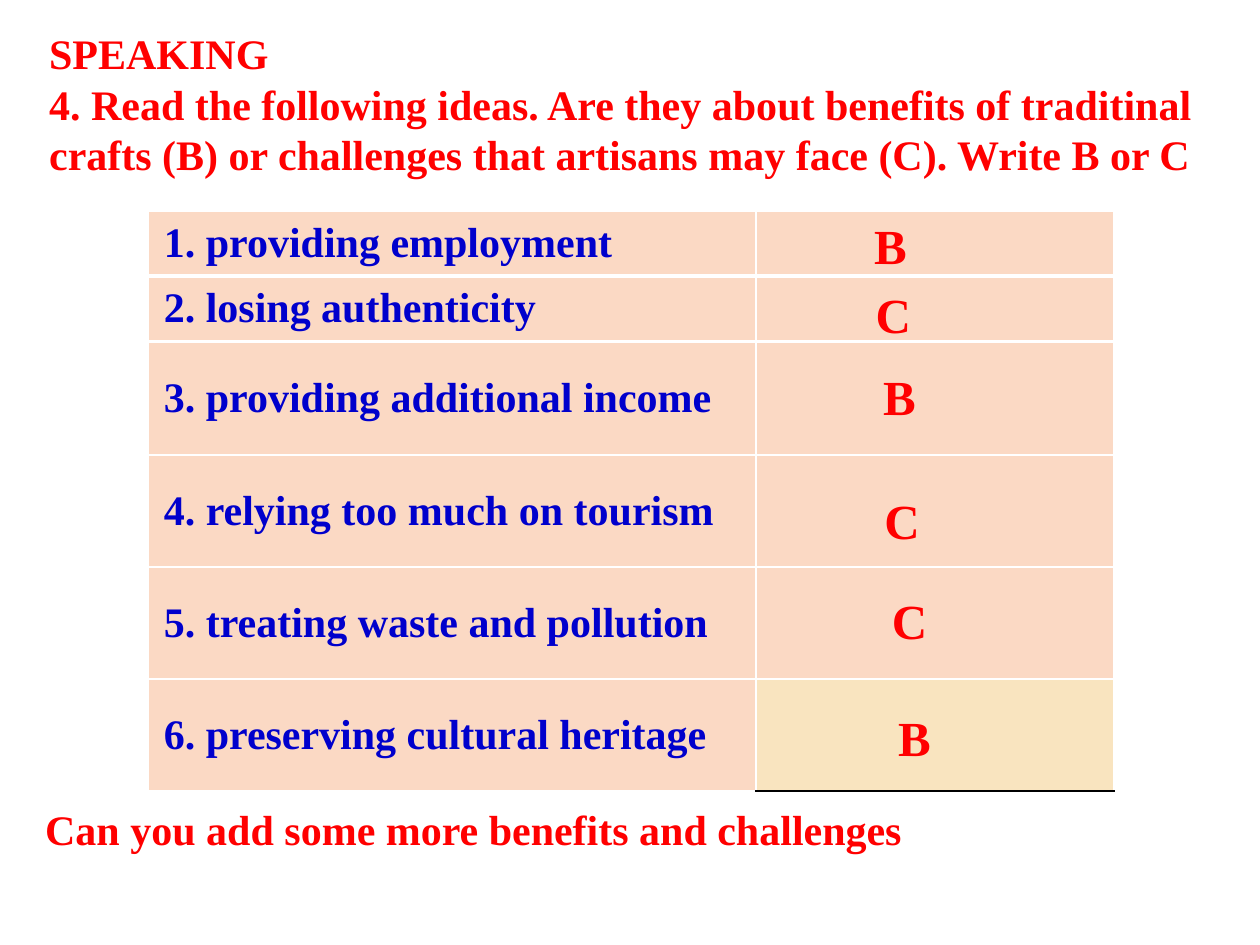
"""Build the speaking exercise slide about traditional crafts."""
from lxml import etree
from pptx import Presentation, util as u
from pptx.dml import color
from pptx.enum import text
from pptx.oxml import ns

RED, BLUE, WHITE, BLACK = "FF0000", "0000CC", "FFFFFF", "000000"
PEACH, CREAM = "FBD9C4", "F9E4BF"


def write(frame, lines, size, hex_color):
    frame.word_wrap = True
    frame.text = "\n".join(lines)
    for paragraph in frame.paragraphs:
        paragraph.alignment = text.PP_ALIGN.LEFT
        formats = {"name": "Times New Roman", "size": u.Pt(size), "bold": True}
        for name, value in formats.items():
            setattr(paragraph.font, name, value)
            setattr(paragraph.runs[0].font, name, value)
        paragraph.runs[0].font.color.rgb = color.RGBColor.from_string(hex_color)


def add_border(properties, index, side, hex_color, points):
    line = etree.Element(ns.qn(f"a:ln{side}"), w=str(u.Pt(points)))
    fill = etree.SubElement(line, ns.qn("a:solidFill"))
    etree.SubElement(fill, ns.qn("a:srgbClr"), val=hex_color)
    properties.insert(index, line)


presentation = Presentation()
presentation.slide_width, presentation.slide_height = u.Inches(10), u.Inches(7.5)
slide = presentation.slides.add_slide(presentation.slide_layouts[5])

title = slide.shapes.title
place = {"left": 0.29, "top": 0.17, "width": 9.43, "height": 1.31}
for name, value in place.items():
    setattr(title, name, u.Inches(value))
title.text_frame.auto_size = text.MSO_AUTO_SIZE.NONE
title.text_frame.vertical_anchor = text.MSO_ANCHOR.TOP
write(title.text_frame, [
    "SPEAKING",
    "4. Read the following ideas. Are they about benefits of traditinal "
    "crafts (B) or challenges that artisans may face (C). Write B or C",
], 24, RED)

ideas = [
    ("1. providing employment", 0.52),
    ("2. losing authenticity", 0.52),
    ("3. providing additional income", 0.9),
    ("4. relying too much on tourism", 0.89),
    ("5. treating waste and pollution", 0.89),
    ("6. preserving cultural heritage", 0.89),
]
last = len(ideas) - 1
table = slide.shapes.add_table(len(ideas), 2, u.Inches(1.17), u.Inches(1.67),
                               u.Inches(7.67), u.Inches(4.61)).table
table.first_row = table.horz_banding = False
for column, width in zip(table.columns, (4.83, 2.84)):
    column.width = u.Inches(width)
cell_format = {
    "vertical_anchor": text.MSO_ANCHOR.MIDDLE,
    "margin_left": u.Inches(0.13), "margin_right": u.Inches(0.13),
    "margin_top": u.Inches(0.05), "margin_bottom": u.Inches(0.05),
}
for row, (idea, height) in enumerate(ideas):
    table.rows[row].height = u.Inches(height)
    write(table.cell(row, 0).text_frame, [idea], 24, BLUE)
    for column in range(2):
        cell = table.cell(row, column)
        for name, value in cell_format.items():
            setattr(cell, name, value)
        is_corner = (row, column) == (last, 1)
        cell.fill.solid()
        cell.fill.fore_color.rgb = color.RGBColor.from_string(CREAM if is_corner else PEACH)
        for index, side in enumerate("LRTB"):
            under_first = (row, side) in ((0, "B"), (1, "T"))
            add_border(cell._tc.get_or_add_tcPr(), index, side,
                       BLACK if is_corner and side == "B" else WHITE,
                       2.5 if under_first else 1.5)

captions = [
    ("B", 6.84, 1.66, 1.17, 0.57, 28),
    ("C", 6.85, 2.21, 1.42, 0.57, 28),
    ("B", 6.91, 2.86, 1.12, 0.57, 28),
    ("C", 6.92, 3.84, 1.12, 0.57, 28),
    ("C", 6.98, 4.64, 1.12, 0.57, 28),
    ("B", 7.03, 5.57, 1.12, 0.57, 28),
    ("Can you add some more benefits and challenges", 0.26, 6.33, 9.43, 0.5, 24),
]
for caption, left, top, width, height, size in captions:
    box = slide.shapes.add_textbox(u.Inches(left), u.Inches(top),
                                   u.Inches(width), u.Inches(height))
    write(box.text_frame, [caption], size, RED)
    box.text_frame.auto_size = text.MSO_AUTO_SIZE.SHAPE_TO_FIT_TEXT

presentation.save("out.pptx")
